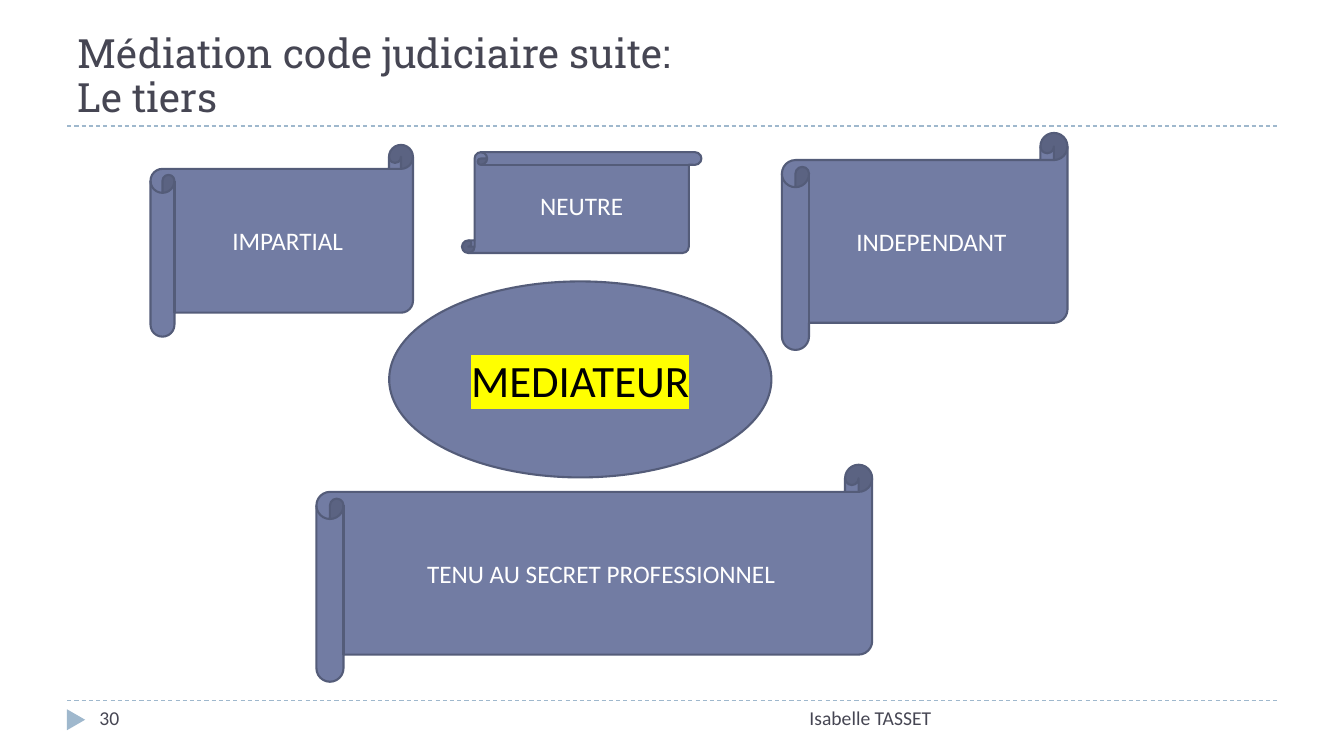
from lxml import etree
from pptx import Presentation
from pptx.dml.color import RGBColor
from pptx.enum.dml import MSO_LINE
from pptx.enum.shapes import MSO_CONNECTOR, MSO_SHAPE
from pptx.enum.text import MSO_ANCHOR, MSO_AUTO_SIZE, PP_ALIGN
from pptx.oxml.ns import qn
from pptx.util import Pt

DASH = MSO_LINE.DASH
STRAIGHT = MSO_CONNECTOR.STRAIGHT
ELLIPSE = MSO_SHAPE.OVAL
TRIANGLE = MSO_SHAPE.ISOSCELES_TRIANGLE
HORIZONTAL_SCROLL = MSO_SHAPE.HORIZONTAL_SCROLL
VERTICAL_SCROLL = MSO_SHAPE.VERTICAL_SCROLL
TOP, MIDDLE, BOTTOM = MSO_ANCHOR.TOP, MSO_ANCHOR.MIDDLE, MSO_ANCHOR.BOTTOM
LEFT, CENTER, RIGHT = PP_ALIGN.LEFT, PP_ALIGN.CENTER, PP_ALIGN.RIGHT
NO_AUTO_SIZE = MSO_AUTO_SIZE.NONE

COLORS = {
    "rule": "9FB8CD",
    "ink": "464653",
    "panel": "727CA3",
    "border": "545C79",
    "white": "FFFFFF",
    "black": "000000",
    "highlight": "FFFF00",
}
FORMATS = {
    "title": {"name": "Roboto Slab", "size": Pt(28.8)},
    "footer": {"name": "Calibri", "size": Pt(14)},
    "quality": {"name": "Calibri", "size": Pt(18)},
    "mediator": {"name": "Calibri", "size": Pt(32)},
}
QUALITIES = [
    (HORIZONTAL_SCROLL, "IMPARTIAL", (107.5, 103.5, 187.5, 137)),
    (VERTICAL_SCROLL, "NEUTRE", (330, 108.75, 171, 72)),
    (HORIZONTAL_SCROLL, "INDEPENDANT", (558.5, 95, 204, 155)),
    (HORIZONTAL_SCROLL, "TENU AU SECRET PROFESSIONNEL", (226, 332, 397, 155)),
]


def color(name):
    """Return the named colour."""
    return RGBColor.from_string(COLORS[name])


def write_text(shape, text, style, ink, alignment, anchor):
    """Fill a shape with one formatted paragraph and return the paragraph."""
    frame = shape.text_frame
    frame.text = text
    settings = {"word_wrap": True, "auto_size": NO_AUTO_SIZE, "vertical_anchor": anchor}
    for name, value in settings.items():
        setattr(frame, name, value)
    paragraph = frame.paragraphs[0]
    paragraph.alignment = alignment
    for run in paragraph.runs:
        run.font.color.rgb = color(ink)
        for name, value in FORMATS[style].items():
            setattr(run.font, name, value)
    return paragraph


def add_rule(slide, left, top, width):
    """Draw a dashed horizontal rule."""
    rule = slide.shapes.add_connector(STRAIGHT, Pt(left), Pt(top), Pt(left + width), Pt(top))
    rule.line.color.rgb = color("rule")
    rule.line.width = Pt(0.75)
    rule.line.dash_style = DASH
    etree.SubElement(rule._element.spPr, qn("a:effectLst"))


def add_title(slide, left, top, width, height):
    """Place the title above its rule."""
    title = slide.shapes.title
    box = {"left": left, "top": top, "width": width, "height": height}
    for name, value in box.items():
        setattr(title, name, Pt(value))
    paragraph = write_text(title, "Médiation code judiciaire suite:\vLe tiers",
                           "title", "ink", LEFT, BOTTOM)
    paragraph.line_spacing = 0.9
    add_rule(slide, left, top + height, width)


def add_footer(slide, left, top, width, height):
    """Place the rule, marker, page number and author."""
    add_rule(slide, left, top, width)
    marker = slide.shapes.add_shape(TRIANGLE, Pt(left - 1.2), Pt(top + 7.2), Pt(15), Pt(13))
    marker.rotation = 90
    marker.shadow.inherit = False
    marker.fill.solid()
    marker.fill.fore_color.rgb = color("rule")
    marker.line.fill.background()
    entries = [("30", 16, 208, LEFT), ("Isabelle TASSET", 256.5, 368, RIGHT)]
    for text, offset, entry_width, alignment in entries:
        entry = slide.shapes.add_textbox(Pt(left + offset), Pt(top), Pt(entry_width), Pt(height))
        write_text(entry, text, "footer", "ink", alignment, TOP)


def add_panel(slide, kind, text, style, ink, left, top, width, height):
    """Draw an outlined panel with a centred label and return its run."""
    panel = slide.shapes.add_shape(kind, Pt(left), Pt(top), Pt(width), Pt(height))
    panel.shadow.inherit = False
    panel.fill.solid()
    panel.fill.fore_color.rgb = color("panel")
    panel.line.color.rgb = color("border")
    panel.line.width = Pt(1.5)
    return write_text(panel, text, style, ink, CENTER, MIDDLE).runs[0]


def add_mediator(slide, left, top, width, height):
    """Draw the central ellipse with its highlighted label."""
    run = add_panel(slide, ELLIPSE, "MEDIATEUR", "mediator", "black", left, top, width, height)
    highlight = etree.Element(qn("a:highlight"))
    etree.SubElement(highlight, qn("a:srgbClr"), val=COLORS["highlight"])
    run._r.rPr.find(qn("a:latin")).addprevious(highlight)


def main():
    """Build and save the presentation."""
    presentation = Presentation()
    presentation.slide_width = Pt(960)
    presentation.slide_height = Pt(540)
    slide = presentation.slides.add_slide(presentation.slide_layouts[5])
    add_title(slide, 48, 18, 864, 72)
    add_footer(slide, 48, 500.4, 864, 29)
    add_mediator(slide, 278, 201, 273, 140)
    for kind, text, box in QUALITIES:
        add_panel(slide, kind, text, "quality", "white", *box)
    presentation.save("out.pptx")


if __name__ == "__main__":
    main()
